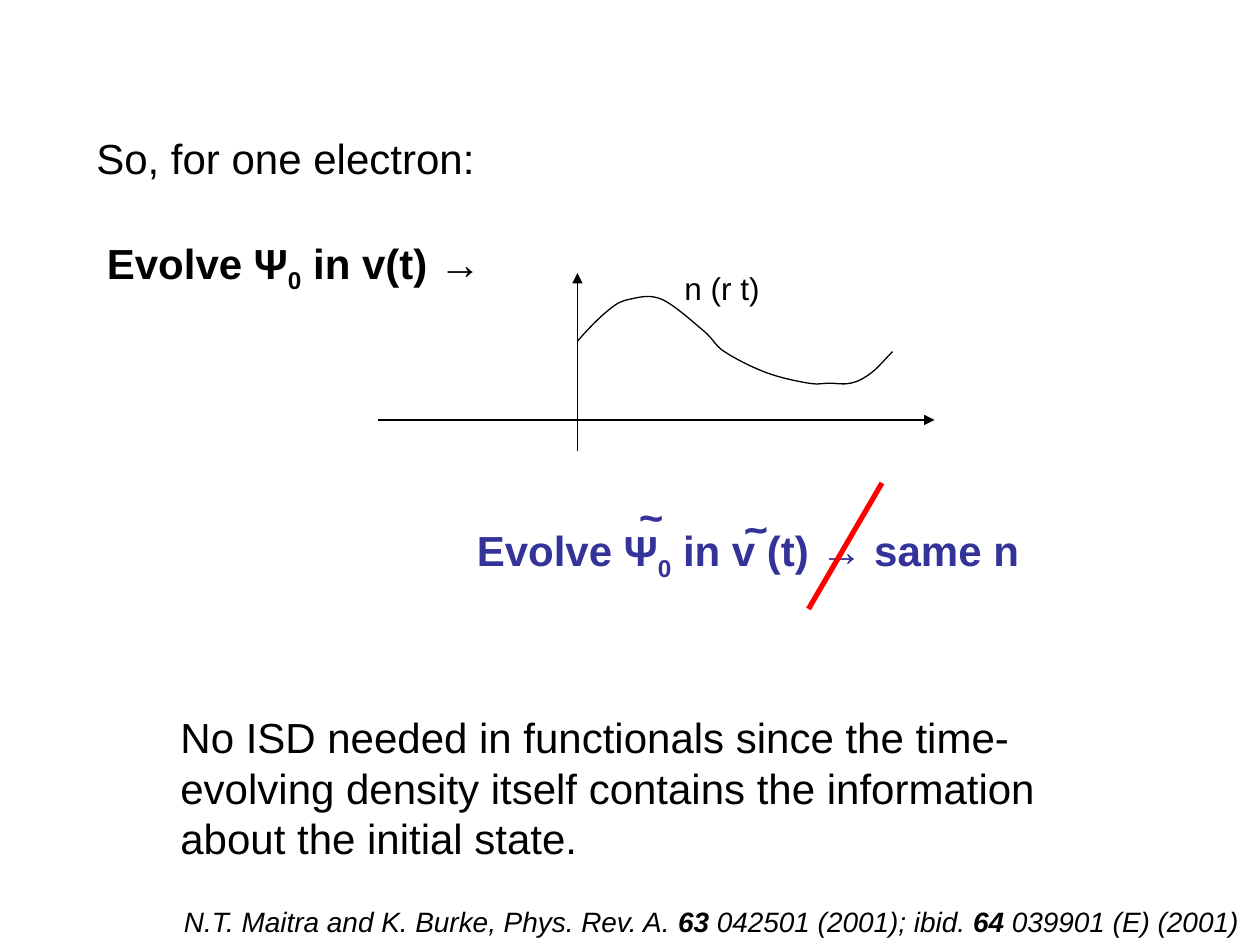
from lxml import etree
from pptx import Presentation
from pptx.dml.color import RGBColor
from pptx.enum import text
from pptx.oxml import ns
from pptx.util import Pt

COLORS = {"ink": "000000", "tilde": "333399", "strike": "FF0000"}

deck = Presentation()
deck.slide_width, deck.slide_height = Pt(720), Pt(540)
slide = deck.slides.add_slide(deck.slide_layouts[6])


def add_text(parent, box, runs, size=24, color="ink", wrap=True, angle=0, indent=7.2, raised=True):
    label = parent.shapes.add_textbox(*[Pt(v) for v in box])
    label.rotation = angle
    frame = label.text_frame
    frame.word_wrap = wrap
    frame.auto_size = text.MSO_AUTO_SIZE.SHAPE_TO_FIT_TEXT
    frame.margin_left = Pt(indent)
    paragraph = frame.paragraphs[0]
    if raised:
        before = etree.SubElement(paragraph._p.get_or_add_pPr(), ns.qn("a:spcBef"))
        etree.SubElement(before, ns.qn("a:spcPct"), val="50000")
    for words, style in runs:
        run = paragraph.add_run()
        run.text = words
        run.font.name = "Arial"
        run.font.size = Pt(size)
        run.font.color.rgb = RGBColor.from_string(COLORS[color])
        run.font.bold = "b" in style
        run.font.italic = "i" in style
        if "sub" in style:
            run.font._element.set("baseline", "-25000")


def add_line(parent, ends, color="ink", width=0.75, arrow=False):
    line = parent.shapes.add_connector(1, *[Pt(v) for v in ends])
    line.line.color.rgb = RGBColor.from_string(COLORS[color])
    line.line.width = Pt(width)
    if arrow:
        etree.SubElement(line.line._get_or_add_ln(), ns.qn("a:tailEnd"), type="triangle")
    etree.SubElement(line._element.spPr, ns.qn("a:effectLst"))


add_text(slide, (48, 72, 642, 36), [("So, for one electron:", "")])

plot = slide.shapes.add_group_shape()
add_line(plot, (330, 258, 330, 156), arrow=True)
add_line(plot, (216, 240, 534, 240), arrow=True)

density_points = [
    (330, 195), (336, 188), (343, 181), (348, 177), (353, 173), (355, 172), (360, 171),
    (365, 170), (371, 168), (378, 171), (385, 174), (396, 184), (402, 189),
    (408, 194), (408, 197), (414, 201), (420, 205), (430, 210), (438, 213),
    (446, 216), (456, 218), (462, 219), (468, 220), (470, 219), (474, 219),
    (478, 219), (481, 220), (486, 219), (491, 218), (494, 216), (498, 213),
    (502, 210), (506, 205), (510, 201),
]
outline = plot.shapes.build_freeform(*density_points[0], scale=Pt(1))
outline.add_line_segments(density_points[1:], close=False)
density = outline.convert_to_shape()
density.shadow.inherit = False
density.fill.background()
density.line.color.rgb = RGBColor.from_string(COLORS["ink"])
density.line.width = Pt(0.75)
segments = list(density._element.iter(ns.qn("a:lnTo")))
for start in range(0, len(segments), 3):
    bezier = etree.Element(ns.qn("a:cubicBezTo"))
    segments[start].addprevious(bezier)
    for segment in segments[start:start + 3]:
        bezier.append(segment[0])
        segment.getparent().remove(segment)

add_text(plot, (384, 150, 57.6, 28.8), [("n (r t)", "")], size=18, wrap=False)

add_text(slide, (54, 132, 312, 36), [("Evolve Ψ", "b"), ("0", ("b", "sub")), (" in v(t) →", "b")])

tilde_system = slide.shapes.add_group_shape()
add_text(tilde_system, (252, 296.4, 381.6, 36),
         [("Evolve Ψ", "b"), ("0", ("b", "sub")), (" in v (t) → same n", "b")],
         color="tilde", indent=20.5)
for box, angle in (((417.6, 282, 62, 36), 353.6), ((358, 276, 82, 36), 358)):
    add_text(tilde_system, box, [("~", "b")], color="tilde", angle=angle)
add_line(tilde_system, (504, 276, 462, 348), color="strike", width=3)

add_text(slide, (96, 403.2, 522, 136.8),
         [("No ISD needed in functionals since the time-evolving density itself "
           "contains the information about the initial state.", "")])

add_text(slide, (98, 513.4, 622, 26.6),
         [("N.T. Maitra and K. Burke, Phys. Rev. A. ", "i"), ("63", "bi"),
          (" 042501 (2001); ibid. ", "i"), ("64", "bi"), (" 039901 (E) (2001)", "i")],
         size=16, wrap=False, raised=False)

deck.save("out.pptx")
